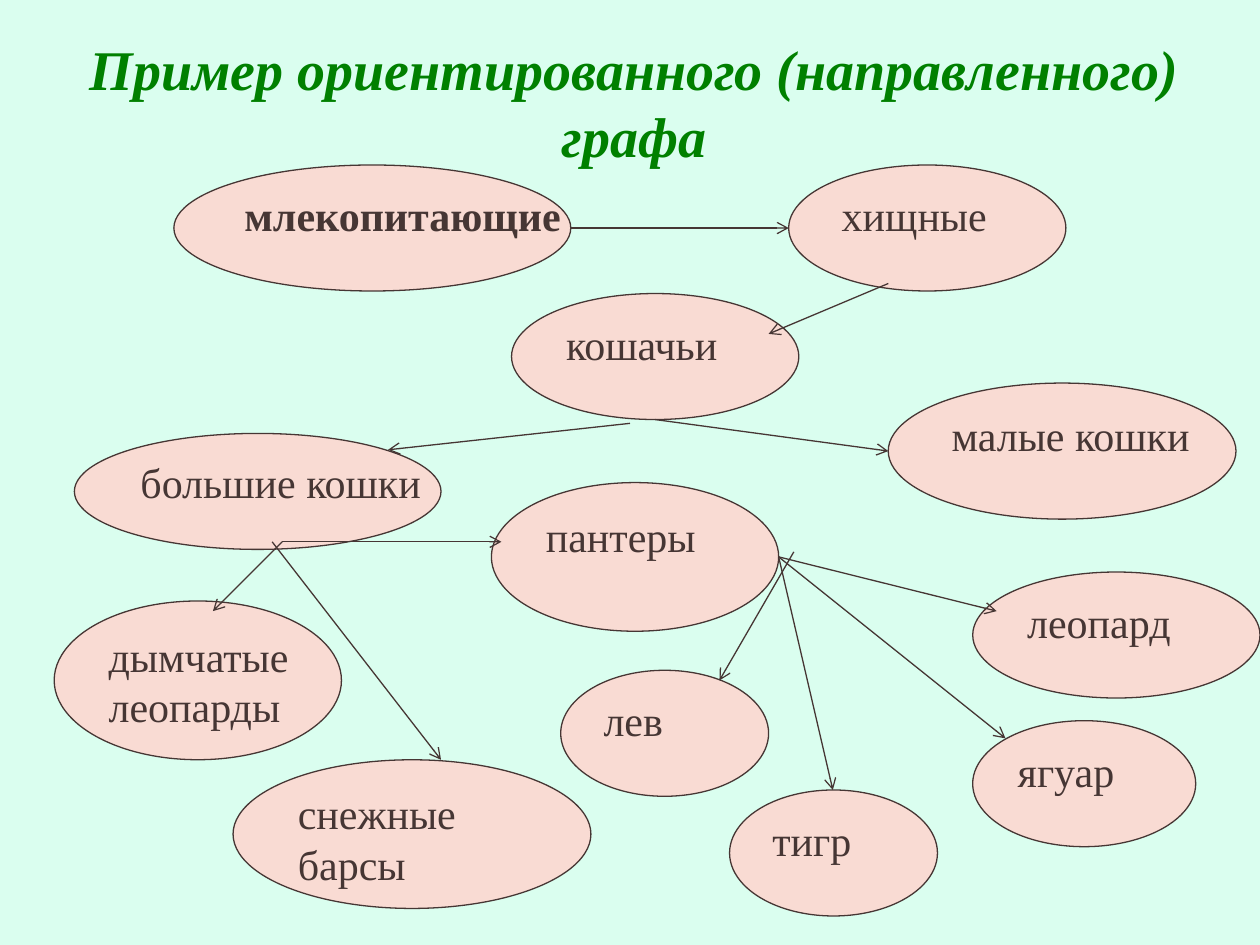
from typing import NamedTuple

from lxml.etree import SubElement
from pptx import Presentation
from pptx.dml.color import RGBColor
from pptx.enum.shapes import MSO_CONNECTOR, MSO_SHAPE
from pptx.enum.text import MSO_ANCHOR as Anchor, PP_ALIGN as Align
from pptx.oxml.ns import qn
from pptx.util import Inches, Pt

FONT = "Times New Roman"
INK, PINK, GREEN, MINT = "463634", "F9DBD3", "008000", "DAFEEF"


class Node(NamedTuple):
    text: str
    left: float
    top: float
    width: float
    height: float = 1
    bold: bool = False


class Edge(NamedTuple):
    x1: float
    y1: float
    x2: float
    y2: float


NODES = [
    Node("млекопитающие", 1.38, 1.31, 3.15, bold=True),
    Node("хищные", 6.26, 1.31, 2.2),
    Node("дымчатые\nлеопарды", 0.43, 4.77, 2.28, 1.26),
    Node("малые кошки", 7.05, 3.04, 2.76, 1.08),
    Node("большие кошки", 0.59, 3.44, 2.91, 0.92),
    Node("снежные\nбарсы", 1.85, 6.03, 2.84, 1.18),
    Node("кошачьи", 4.06, 2.33, 2.28),
    Node("пантеры", 3.9, 3.83, 2.28, 1.18),
    Node("лев", 4.45, 5.32, 1.65),
    Node("тигр", 5.79, 6.27, 1.65),
    Node("леопард", 7.72, 4.54, 2.28),
    Node("ягуар", 7.72, 5.72, 1.77),
]

EDGES = [
    Edge(4.53, 1.81, 6.26, 1.81),  # mammals to predators
    Edge(7.05, 2.25, 6.1, 2.65),  # predators to cats
    Edge(5, 3.36, 3.08, 3.57),  # cats to big cats
    Edge(5.2, 3.33, 7.05, 3.58),  # cats to small cats
    Edge(2.24, 4.3, 1.69, 4.85),  # big cats to their three groups
    Edge(2.24, 4.3, 3.98, 4.3),
    Edge(2.16, 4.3, 3.5, 6.03),
    Edge(6.18, 4.42, 7.91, 4.85),  # panthers to their four species
    Edge(6.3, 4.38, 5.71, 5.4),
    Edge(6.18, 4.42, 6.61, 6.27),
    Edge(6.18, 4.42, 7.98, 5.86),
]


def color(code: str) -> RGBColor:
    return RGBColor.from_string(code)


def style(frame, size: float, code: str, align, bold=False, italic=False) -> None:
    for para in frame.paragraphs:
        para.alignment = align
        for run in para.runs:
            font = run.font
            font.name, font.size = FONT, Pt(size)
            font.bold, font.italic = bold, italic
            font.color.rgb = color(code)


def set_line(line) -> None:
    line.color.rgb = color(INK)
    line.width = Pt(0.75)


def add_title(slide, text: str) -> None:
    title = slide.shapes.title
    title.left, title.top = Inches(0.27), Inches(0.36)
    title.width, title.height = Inches(9.53), Inches(1.02)
    frame = title.text_frame
    frame.text = text
    frame.word_wrap = True
    frame.vertical_anchor = Anchor.MIDDLE
    frame.margin_bottom = Inches(0.18)
    style(frame, 32, GREEN, Align.CENTER, True, True)


def add_node(slide, node: Node) -> None:
    box = [Inches(n) for n in (node.left, node.top, node.width, node.height)]
    oval = slide.shapes.add_shape(MSO_SHAPE.OVAL, *box)
    oval.shadow.inherit = False
    oval.fill.solid()
    oval.fill.fore_color.rgb = color(PINK)
    set_line(oval.line)
    frame = oval.text_frame
    frame.text = node.text
    frame.word_wrap = False
    frame.vertical_anchor = Anchor.TOP
    style(frame, 24, INK, Align.LEFT, node.bold)


def add_edge(slide, edge: Edge) -> None:
    ends = [Inches(n) for n in edge]
    link = slide.shapes.add_connector(MSO_CONNECTOR.STRAIGHT, *ends)
    set_line(link.line)
    SubElement(link.line._get_or_add_ln(), qn("a:tailEnd"), type="arrow")
    SubElement(link._element.spPr, qn("a:effectLst"))


def main() -> None:
    deck = Presentation()
    deck.slide_width, deck.slide_height = Inches(10), Inches(7.5)
    slide = deck.slides.add_slide(deck.slide_layouts[5])
    fill = slide.background.fill
    fill.solid()
    fill.fore_color.rgb = color(MINT)

    add_title(slide, "Пример ориентированного (направленного) графа")
    for node in NODES:
        add_node(slide, node)
    for edge in EDGES:
        add_edge(slide, edge)
    deck.save("out.pptx")


if __name__ == "__main__":
    main()
